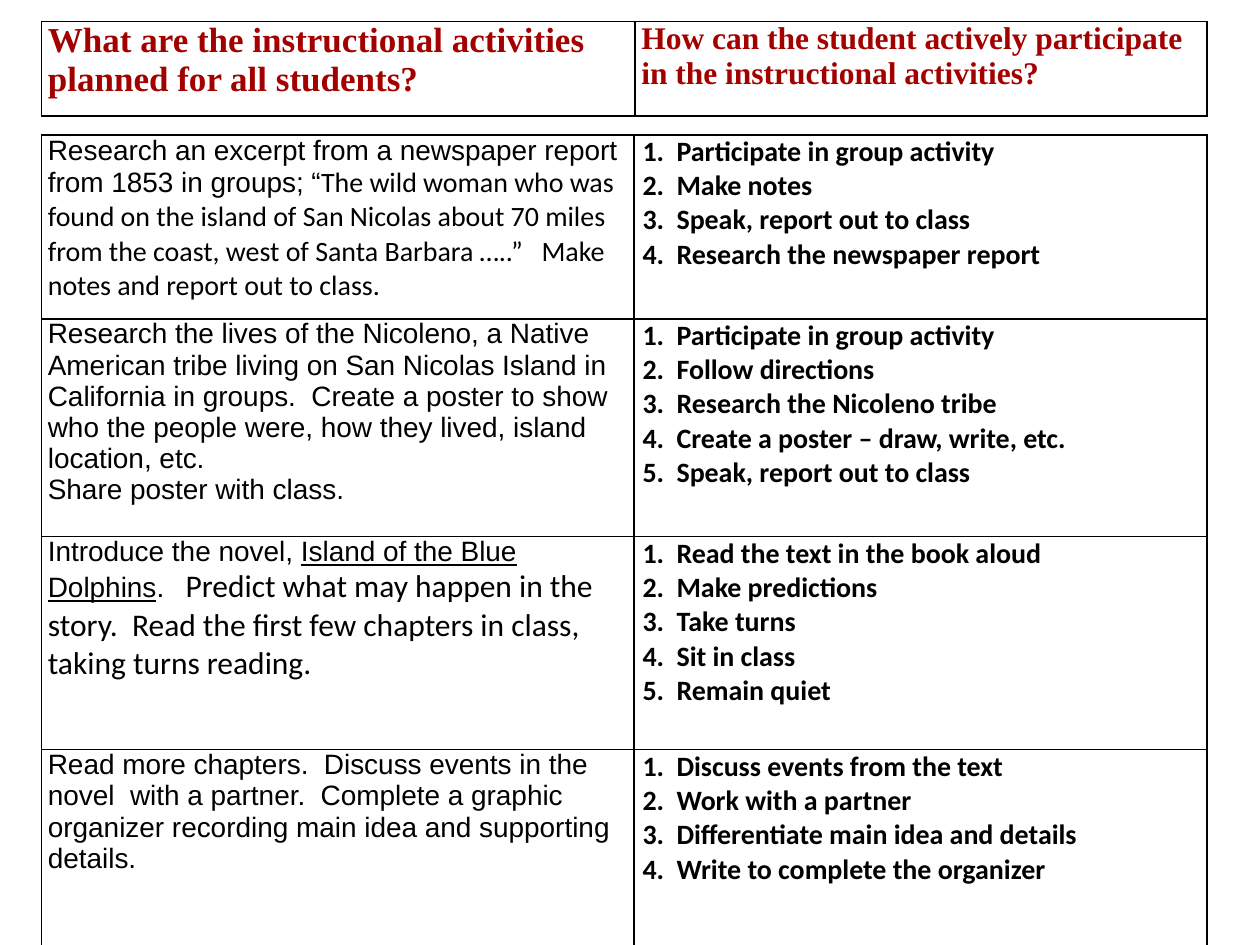
import pptx
import pptx.dml.color
import pptx.oxml
import pptx.oxml.ns
import pptx.util
from pptx.util import Inches

BLACK, WHITE, RED = "000000", "FFFFFF", "A30000"
SANS, BODY, SERIF = "Arial", "Calibri", "Times New Roman"


def color(hex_code):
    return pptx.dml.color.RGBColor.from_string(hex_code)


class LessonSlide:
    """Holds the text style and the slide, and adds each kind of element."""

    def __init__(self, presentation, size=16, ink=BLACK):
        self.slide = presentation.slides.add_slide(presentation.slide_layouts[6])
        self.size = size
        self.ink = ink

    def table(self, left, top, widths, heights):
        grid = self.slide.shapes.add_table(
            len(heights), len(widths), Inches(left), Inches(top),
            Inches(sum(widths)), Inches(sum(heights))).table
        grid.first_row = grid.horz_banding = False
        for column, width in zip(grid.columns, widths):
            column.width = Inches(width)
        for row, height in zip(grid.rows, heights):
            row.height = Inches(height)
        for cell in grid.iter_cells():
            self.borders(cell)
        return grid

    def borders(self, cell):
        properties = cell._tc.get_or_add_tcPr()
        for position, side in enumerate("LRTB"):
            properties.insert(position, pptx.oxml.parse_xml(
                f'<a:ln{side} {pptx.oxml.ns.nsdecls("a")} w="12700"><a:solidFill>'
                f'<a:srgbClr val="{BLACK}"/></a:solidFill></a:ln{side}>'))

    def run(self, paragraph, text, font=SANS, size=None, bold=False, underline=False, ink=None):
        run = paragraph.add_run()
        run.text = text
        run.font.name = font
        run.font.size = pptx.util.Pt(size or self.size)
        run.font.bold = bold
        run.font.underline = underline
        run.font.color.rgb = color(ink or self.ink)

    def fill_cell(self, cell, paragraphs, side_margin=0.05, fill=None, numbered=False):
        cell.margin_left = cell.margin_right = Inches(side_margin)
        cell.margin_top = cell.margin_bottom = 0
        if fill:
            cell.fill.solid()
            cell.fill.fore_color.rgb = color(fill)
        else:
            cell.fill.background()
        frame = cell.text_frame
        for index, runs in enumerate(paragraphs):
            paragraph = frame.add_paragraph() if index else frame.paragraphs[0]
            if numbered:
                self.number(paragraph)
            for text, style in runs:
                self.run(paragraph, text, **style)

    def number(self, paragraph, indent=0.27):
        properties = paragraph._p.get_or_add_pPr()
        properties.set("marL", str(Inches(indent)))
        properties.set("indent", str(-Inches(indent)))
        properties.append(pptx.oxml.parse_xml(
            f'<a:buFont {pptx.oxml.ns.nsdecls("a")} typeface="+mj-lt"/>'))
        properties.append(pptx.oxml.parse_xml(
            f'<a:buAutoNum {pptx.oxml.ns.nsdecls("a")} type="arabicPeriod"/>'))

    def numbered_list(self, cell, steps):
        paragraphs = [[(step, {"font": BODY, "bold": True})] for step in steps]
        self.fill_cell(cell, paragraphs, side_margin=0.07, fill=WHITE, numbered=True)


HEADINGS = [
    ("What are the instructional activities planned for all students?", 20),
    ("How can the student actively participate in the instructional activities?", 18),
]

LESSONS = [
    (1.46,
     [[("Research an excerpt from a newspaper report from 1853 in groups; “", {}),
       ("The wild woman who was found on the island of San Nicolas about 70 miles from "
        "the coast, west of Santa Barbara …..”   Make notes and report out to class.",
        {"font": BODY})]],
     ["Participate in group activity", "Make notes", "Speak, report out to class",
      "Research the newspaper report"]),
    (1.73,
     [[("Research the lives of the Nicoleno, a Native American tribe living on San Nicolas "
        "Island in California in groups.  Create a poster to show who the people were, "
        "how they lived, island location, etc.", {})],
      [("Share poster with class.", {})]],
     ["Participate in group activity", "Follow directions", "Research the Nicoleno tribe",
      "Create a poster – draw, write, etc.", "Speak, report out to class"]),
    (1.69,
     [[("Introduce the novel, ", {}),
       ("Island of the Blue Dolphins", {"underline": True}),
       (".", {}),
       ("   Predict what may happen in the story.  Read the first few chapters in class, "
        "taking turns reading.", {"font": BODY, "size": 18})]],
     ["Read the text in the book aloud", "Make predictions", "Take turns", "Sit in class",
      "Remain quiet"]),
    (1.6,
     [[("Read more chapters.  Discuss events in the novel  with a partner.  Complete a "
        "graphic organizer recording main idea and supporting details.", {})]],
     ["Discuss events from the text", "Work with a partner",
      "Differentiate main idea and details", "Write to complete the organizer"]),
]


def main():
    presentation = pptx.Presentation()
    presentation.slide_width = Inches(10)
    presentation.slide_height = Inches(7.5)
    page = LessonSlide(presentation)

    lessons = page.table(0.33, 1.07, [4.7, 4.55], [height for height, _, _ in LESSONS])
    for row, (_, activity, steps) in enumerate(LESSONS):
        page.fill_cell(lessons.cell(row, 0), activity)
        page.numbered_list(lessons.cell(row, 1), steps)

    header = page.table(0.33, 0.17, [4.71, 4.54], [0.75])
    for column, (question, size) in enumerate(HEADINGS):
        style = {"font": SERIF, "size": size, "bold": True, "ink": RED}
        page.fill_cell(header.cell(0, column), [[(question, style)]])

    presentation.save("out.pptx")


if __name__ == "__main__":
    main()
